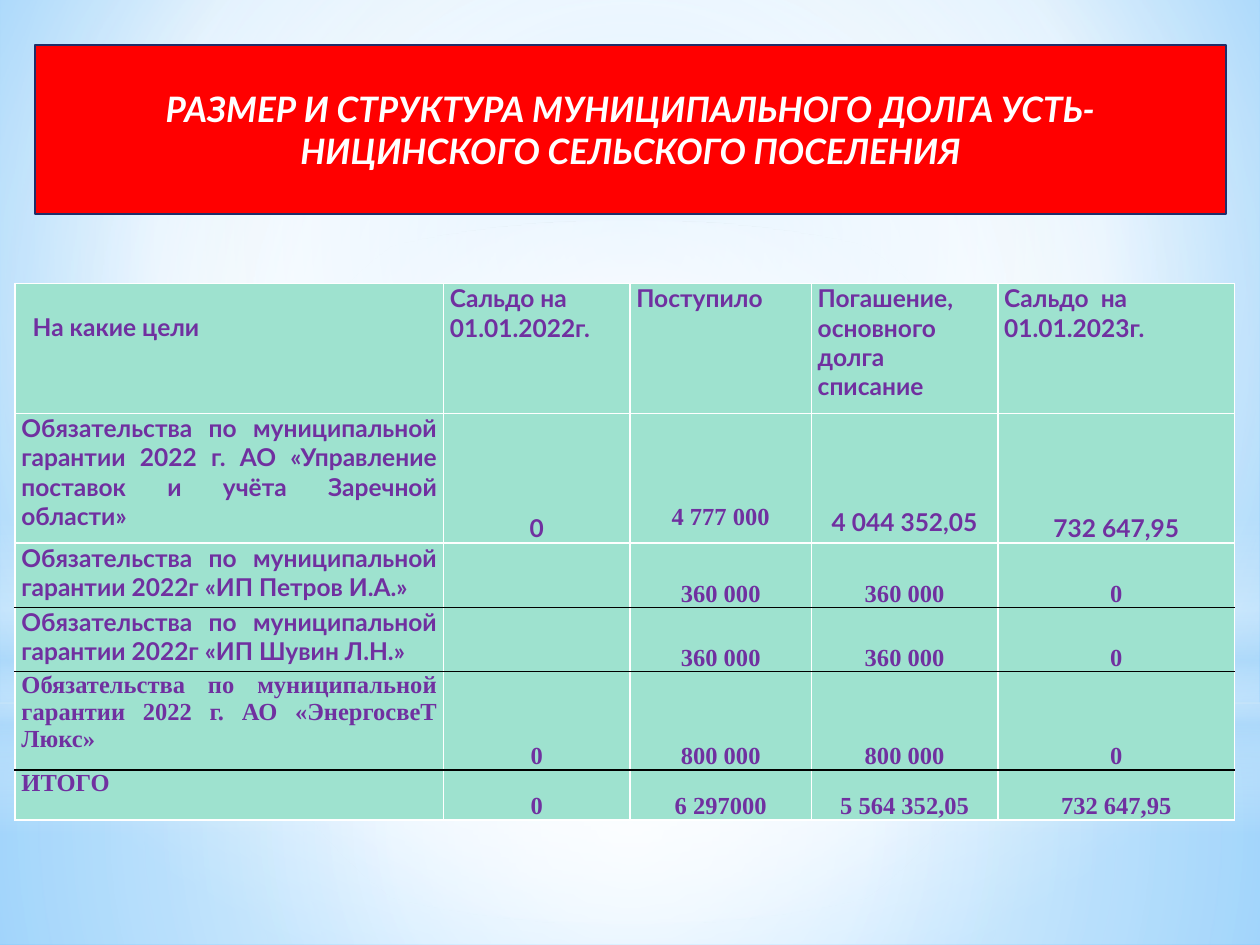
from lxml import etree
from pptx import Presentation
from pptx.dml.color import RGBColor
from pptx.enum.shapes import MSO_SHAPE as Shape
from pptx.enum.text import MSO_ANCHOR as Anchor, MSO_AUTO_SIZE as AutoSize, PP_ALIGN as Align
from pptx.oxml.ns import nsdecls, qn
from pptx.util import Inches, Pt

COLORS = {"white": "FFFFFF", "sky": "B4DCFA", "light blue": "9ED5FF", "blue": "5BB9FF",
          "red": "FF0000", "navy": "1F2E69", "mint": "9EE2CF", "purple": "7030A0",
          "black": "000000"}
SANS, SERIF = "Lato", "Times New Roman"
CENTER = (50, 50, 50, 50)

TITLE = "РАЗМЕР И СТРУКТУРА МУНИЦИПАЛЬНОГО ДОЛГА УСТЬ-НИЦИНСКОГО СЕЛЬСКОГО ПОСЕЛЕНИЯ"
COLUMN_WIDTHS = [3.4, 1.48, 1.44, 1.48, 1.88]
ROW_HEIGHTS = [1.03, 1.03, 0.51, 0.51, 0.78, 0.4]
ROWS = [
    ["На какие цели", "Сальдо на\n01.01.2022г.", "Поступило",
     "Погашение, основного долга списание", "Сальдо  на\n01.01.2023г."],
    ["Обязательства по муниципальной гарантии 2022 г. АО «Управление поставок и учёта "
     "Заречной области»", "0", "4 777 000", "4 044 352,05", "732 647,95"],
    ["Обязательства по муниципальной гарантии 2022г «ИП Петров И.А.»",
     "", "360 000", "360 000", "0"],
    ["Обязательства по муниципальной гарантии 2022г «ИП Шувин Л.Н.»",
     "", "360 000", "360 000", "0"],
    ["Обязательства по муниципальной гарантии 2022 г. АО «ЭнергосвеТ Люкс»",
     "0", "800 000", "800 000", "0"],
    ["ИТОГО", "0", "6 297000", "5 564 352,05", "732 647,95"],
]
BLACK_RULES = (3, 4, 5)  # rows with a black line above them


def rgb(name):
    return RGBColor.from_string(COLORS[name])


def write_text(frame, text, *, font=SANS, size=14, color="purple", align=Align.LEFT,
               italic=False):
    for index, line in enumerate(text.split("\n")):
        para = frame.add_paragraph() if index else frame.paragraphs[0]
        para.alignment = align
        span = para.add_run()
        span.text = line
        span.font.name = font
        span.font.size = Pt(size)
        span.font.bold = True
        span.font.italic = italic
        span.font.color.rgb = rgb(color)


def set_gradient(fill, stops, focus=None):
    """Apply (position, colour, opacity) stops: radial around focus, else top to bottom."""
    fill.gradient()
    gradient = fill._xPr.find(qn("a:gradFill"))
    for child in list(gradient):
        gradient.remove(child)
    marks = "".join(
        f'<a:gs pos="{position * 1000}"><a:srgbClr val="{COLORS[color]}">'
        f'<a:alpha val="{opacity * 1000}"/></a:srgbClr></a:gs>'
        for position, color, opacity in stops)
    if focus:
        sides = " ".join(f'{side}="{value * 1000}"' for side, value in zip("ltrb", focus))
        course = f'<a:path path="circle"><a:fillToRect {sides}/></a:path>'
    else:
        course = '<a:lin ang="5400000" scaled="0"/>'
    source = f'<a:gradFill {nsdecls("a")}><a:gsLst>{marks}</a:gsLst>{course}</a:gradFill>'
    gradient.extend(list(etree.fromstring(source)))


def add_glow(page, kind, top, height, stops, focus=None):
    glow = page.shapes.add_shape(kind, 0, Inches(top), Inches(10), Inches(height))
    glow.shadow.inherit = False
    glow.line.fill.background()
    set_gradient(glow.fill, stops, focus)


def add_backdrop(page):
    set_gradient(page.background.fill,
                 [(0, "light blue", 100), (60, "white", 100), (100, "blue", 100)],
                 (20, 10, 20, 60))
    add_glow(page, Shape.RECTANGLE, 5.58, 1.92,
             [(0, "white", 91), (37, "white", 76), (100, "sky", 79)], CENTER)
    add_glow(page, Shape.RECTANGLE, 0, 5.58,
             [(0, "white", 89), (48, "white", 62), (100, "sky", 79)], CENTER)
    add_glow(page, Shape.RECTANGLE, 4.12, 2.5,
             [(0, "white", 0), (29, "white", 30), (45, "sky", 40),
              (55, "white", 26), (65, "sky", 60), (100, "white", 0)])
    add_glow(page, Shape.OVAL, 1.75, 5.58, [(0, "white", 100), (56, "white", 0)], CENTER)


def set_borders(cell, top, bottom):
    properties = cell._tc.get_or_add_tcPr()
    sides = {"L": "white", "R": "white", "T": top, "B": bottom}
    for index, (side, color) in enumerate(sides.items()):
        properties.insert(index, etree.fromstring(
            f'<a:ln{side} {nsdecls("a")} w="12700"><a:solidFill>'
            f'<a:srgbClr val="{COLORS[color]}"/></a:solidFill></a:ln{side}>'))


def rule_color(row):
    return "black" if row in BLACK_RULES else "white"


def fill_cell(cell, row, column, text):
    cell.margin_left = cell.margin_right = Inches(0.05)
    cell.margin_top = cell.margin_bottom = 0
    cell.fill.solid()
    cell.fill.fore_color.rgb = rgb("mint")
    set_borders(cell, rule_color(row), rule_color(row + 1))
    is_number = row > 0 and column > 0
    if is_number:
        cell.vertical_anchor = Anchor.BOTTOM
        align = Align.CENTER
    else:
        align = Align.JUSTIFY if row else Align.LEFT
    if row == 1 and column in (2, 3):
        cell.margin_bottom = Inches(0.1 if column == 2 else 0.05)
    if row == column == 0:
        cell.margin_top, cell.margin_left = Inches(0.23), Inches(0.14)
    serif = row > 3 or (is_number and row > 1) or (row, column) == (1, 2)
    if text:
        write_text(cell.text_frame, text, font=SERIF if serif else SANS, align=align)


def add_debt_table(page):
    table = page.shapes.add_table(
        len(ROWS), len(COLUMN_WIDTHS), Inches(0.12), Inches(2.25),
        Inches(sum(COLUMN_WIDTHS)), Inches(sum(ROW_HEIGHTS))).table
    for column, width in zip(table.columns, COLUMN_WIDTHS):
        column.width = Inches(width)
    for row, height in zip(table.rows, ROW_HEIGHTS):
        row.height = Inches(height)
    for row, texts in enumerate(ROWS):
        for column, text in enumerate(texts):
            fill_cell(table.cell(row, column), row, column, text)


def add_title(page):
    """Shape the title placeholder as an ellipse in front of the backdrop."""
    title = page.shapes.title
    title.left, title.top = Inches(0.28), Inches(0.36)
    title.width, title.height = Inches(9.45), Inches(1.34)
    title._element.spPr.find(qn("a:xfrm")).addnext(etree.fromstring(
        f'<a:prstGeom {nsdecls("a")} prst="ellipse"><a:avLst/></a:prstGeom>'))
    title.fill.solid()
    title.fill.fore_color.rgb = rgb("red")
    title.line.color.rgb = rgb("navy")
    title.line.width = Pt(1.25)
    frame = title.text_frame
    frame.word_wrap = True
    frame.auto_size = AutoSize.NONE
    frame.vertical_anchor = Anchor.MIDDLE
    write_text(frame, TITLE, size=20, color="white", align=Align.CENTER, italic=True)
    page.shapes._spTree.append(title._element)


def main():
    deck = Presentation()
    deck.slide_width, deck.slide_height = Inches(10), Inches(7.5)
    page = deck.slides.add_slide(deck.slide_layouts[5])
    add_backdrop(page)
    add_debt_table(page)
    add_title(page)
    deck.save("out.pptx")


if __name__ == "__main__":
    main()
